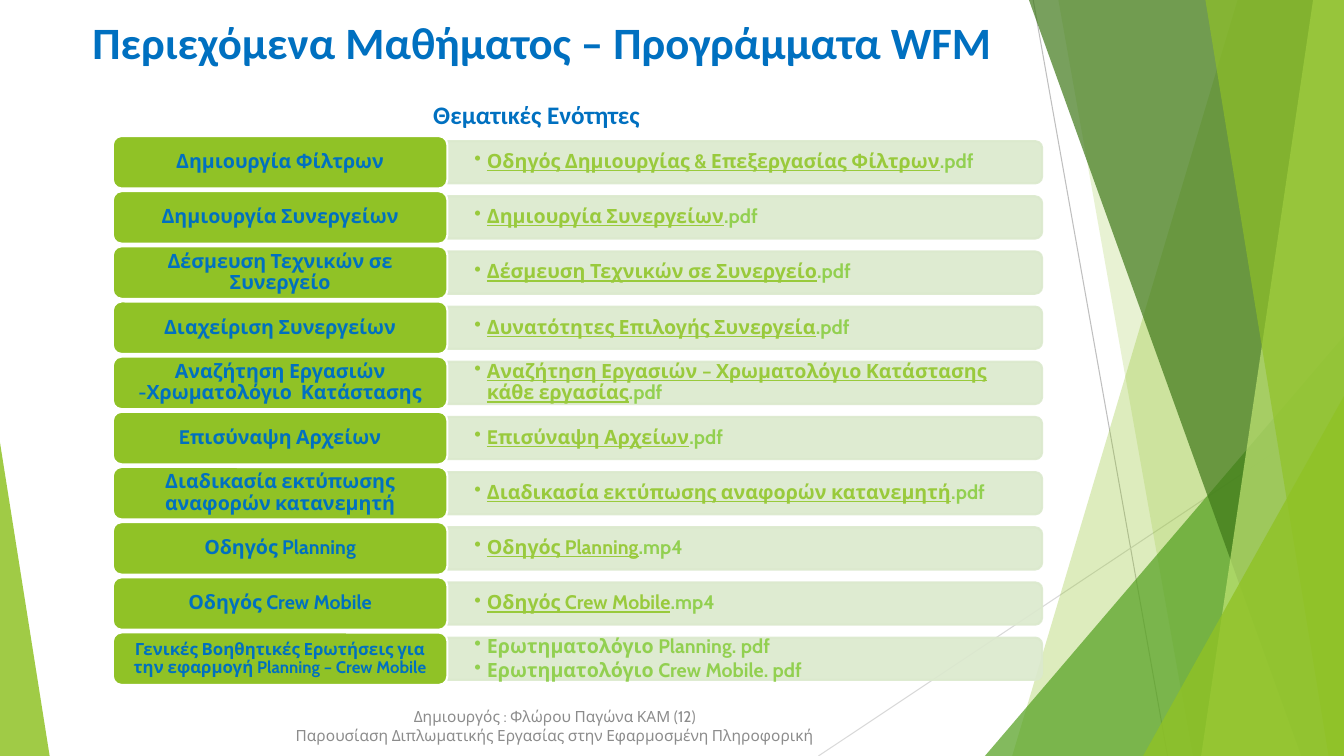
import lxml.etree
import pptx
import pptx.dml.color
import pptx.enum.shapes
import pptx.enum.text
import pptx.oxml.ns
import pptx.util

Pt = pptx.util.Pt
qn = pptx.oxml.ns.qn
SHAPES = pptx.enum.shapes.MSO_SHAPE
ALIGN = pptx.enum.text.PP_ALIGN
ANCHOR = pptx.enum.text.MSO_ANCHOR

# Content
TITLE = "Περιεχόμενα Μαθήματος – Προγράμματα WFM"
SUBTITLE = "Θεματικές Ενότητες"
FOOTER = [
    "Δημιουργός : Φλώρου Παγώνα ΚΑΜ (12)",
    "Παρουσίαση Διπλωματικής Εργασίας στην Εφαρμοσμένη Πληροφορική",
]
# Each unit: label, then its files as (underlined part, plain part)
UNITS = [
    ("Δημιουργία Φίλτρων", [("Οδηγός Δημιουργίας & Επεξεργασίας Φίλτρων", ".pdf")]),
    ("Δημιουργία Συνεργείων", [("Δημιουργία Συνεργείων", ".pdf")]),
    ("Δέσμευση Τεχνικών σε Συνεργείο", [("Δέσμευση Τεχνικών σε Συνεργείο", ".pdf")]),
    ("Διαχείριση Συνεργείων", [("Δυνατότητες Επιλογής Συνεργεία", ".pdf")]),
    ("Αναζήτηση Εργασιών -Χρωματολόγιο  Κατάστασης",
     [("Αναζήτηση Εργασιών – Χρωματολόγιο Κατάστασης κάθε εργασίας", ".pdf")]),
    ("Eπισύναψη Αρχείων", [("Eπισύναψη Αρχείων", ".pdf")]),
    ("Διαδικασία εκτύπωσης αναφορών κατανεμητή",
     [("Διαδικασία εκτύπωσης αναφορών κατανεμητή", ".pdf")]),
    ("Οδηγός Planning", [("Οδηγός Planning", ".mp4")]),
    ("Οδηγός Crew Mobile", [("Οδηγός Crew Mobile", ".mp4")]),
    ("Γενικές Βοηθητικές Ερωτήσεις για την εφαρμογή Planning – Crew Mobile",
     [("", "Ερωτηματολόγιο Planning. pdf"), ("", "Ερωτηματολόγιο Crew Mobile. pdf")]),
]

THEME = {
    "heading_font": "Calibri", "body_font": "Cabin",
    "title": 32, "subtitle": 18, "body": 14, "small": 12, "footer": 11,
    "blue": "0070C0", "grey": "8C8C8C", "green": "90C226", "white": "FFFFFF",
    "bar": "DBE9CD", "link": "99CA3C", "file": "92D050",
    "mid_green": "54A021", "dark_green": "3F7819", "pale_green": "C0E474",
}

# Backdrop: rays are (top x, bottom x), triangles are (left, top, width, height, apex)
WIDTH, HEIGHT = 960, 540
RULES = [((738, 0), (834, 540), "BFBFBF"), ((960, 290), (584.6, 540), "D9D9D9")]
FACETS = [
    ("ray", (884, 723), "green", 30),
    ("ray", (756, 852), "green", 20),
    ("triangle", (703.5, 240, 256.5, 300, 1), "mid_green", 72),
    ("ray", (735, 929.5), "dark_green", 70),
    ("ray", (938, 858), "pale_green", 70),
    ("ray", (861, 949), "green", 65),
    ("triangle", (816.5, 283, 143.5, 257, 1), "green", 80),
    ("triangle", (0, 316, 35.5, 224, 0), "green", 85),
]

# Rows of units
FIRST_CENTRE, ROW_STEP = 115.9, 39.4
LABEL_LEFT, LABEL_WIDTH, LABEL_HEIGHT = 80.6, 239, 37.5
BAR_LEFT, BAR_WIDTH, BAR_HEIGHT = 319.6, 424.8, 30.2

deck = pptx.Presentation()
deck.slide_width, deck.slide_height = Pt(WIDTH), Pt(HEIGHT)
page = deck.slides.add_slide(deck.slide_layouts[6])


def rgb(name):
    return pptx.dml.color.RGBColor.from_string(THEME.get(name, name))


def paint(shape, fill, line=None, opacity=100):
    shape.shadow.inherit = False
    shape.fill.solid()
    shape.fill.fore_color.rgb = rgb(fill)
    if line:
        shape.line.color.rgb = rgb(line)
        shape.line.width = Pt(1.5)
    else:
        shape.line.fill.background()
    if opacity < 100:
        for color in list(shape._element.spPr.iter(qn("a:srgbClr"))):
            lxml.etree.SubElement(color, qn("a:alpha")).set("val", str(opacity * 1000))


def add_box(left, top, width, height):
    return page.shapes.add_textbox(Pt(left), Pt(top), Pt(width), Pt(height))


def write(box, paragraphs, size, color, font="body_font", bold=True, align=ALIGN.CENTER,
          anchor=ANCHOR.MIDDLE, margins=(7.2, 3.6), wrap=True, spacing=None, after=0,
          bullet=False):
    """Each paragraph is a string or a list of (text, color, underlined)."""
    frame = box.text_frame
    frame.word_wrap = wrap
    frame.vertical_anchor = anchor
    frame.margin_left = frame.margin_right = Pt(margins[0])
    frame.margin_top = frame.margin_bottom = Pt(margins[1])
    for index, spans in enumerate(paragraphs):
        para = frame.add_paragraph() if index else frame.paragraphs[0]
        para.alignment = align
        para.space_after = Pt(after)
        if spacing:
            para.line_spacing = spacing
        if bullet:
            settings = para._p.get_or_add_pPr()
            settings.set("marL", str(Pt(9)))
            settings.set("indent", str(-Pt(9)))
            lxml.etree.SubElement(settings, qn("a:buChar")).set("char", "•")
        if isinstance(spans, str):
            spans = [(spans, color, False)]
        for text, span_color, underlined in spans:
            span = para.add_run()
            span.text = text
            span.font.name = THEME[font]
            span.font.size = Pt(THEME[size])
            span.font.bold = bold
            span.font.underline = underlined
            span.font.color.rgb = rgb(span_color)


# Backdrop
for start, end, color in RULES:
    rule = page.shapes.add_connector(
        pptx.enum.shapes.MSO_CONNECTOR.STRAIGHT, *map(Pt, start + end))
    rule.line.color.rgb = rgb(color)
    rule.line.width = Pt(0.75)
    lxml.etree.SubElement(rule._element.spPr, qn("a:effectLst"))

for kind, geometry, color, opacity in FACETS:
    if kind == "ray":
        top_x, bottom_x = geometry
        outline = page.shapes.build_freeform(Pt(top_x), 0)
        corners = [(WIDTH, 0), (WIDTH, HEIGHT), (bottom_x, HEIGHT)]
        outline.add_line_segments([(Pt(x), Pt(y)) for x, y in corners], close=True)
        facet = outline.convert_to_shape()
    else:
        facet = page.shapes.add_shape(SHAPES.ISOSCELES_TRIANGLE, *map(Pt, geometry[:4]))
        facet.adjustments[0] = geometry[4]
    paint(facet, color, opacity=opacity)

# Headings and footer
write(add_box(49, 7.2, 676.8, 103.7), [TITLE], "title", "blue",
      font="heading_font", anchor=ANCHOR.TOP)
write(add_box(148.3, 504, 496, 28.8), FOOTER, "footer", "grey", bold=False)
write(add_box(302.4, 67.7, 163.4, 28.8), [SUBTITLE], "subtitle", "blue",
      font="heading_font", anchor=ANCHOR.TOP, align=ALIGN.LEFT, wrap=False)

# Units
for row, (label_text, files) in enumerate(UNITS):
    centre = FIRST_CENTRE + row * ROW_STEP
    # The bar is a tall shape turned a quarter, so its round corners face right
    bar = page.shapes.add_shape(
        SHAPES.ROUND_2_SAME_RECTANGLE,
        Pt(BAR_LEFT + (BAR_WIDTH - BAR_HEIGHT) / 2), Pt(centre - BAR_WIDTH / 2),
        Pt(BAR_HEIGHT), Pt(BAR_WIDTH))
    bar.rotation = 90
    paint(bar, "bar", line="bar", opacity=90)

    entries = [[(text, color, underlined)
                for text, color, underlined in ((name, "link", True), (rest, "file", False))
                if text] for name, rest in files]
    write(add_box(BAR_LEFT, centre - BAR_HEIGHT / 2, BAR_WIDTH, BAR_HEIGHT), entries,
          "body", "file", align=ALIGN.LEFT, margins=(19.2, 0), spacing=0.9, after=2.1,
          bullet=True)

    label = page.shapes.add_shape(
        SHAPES.ROUNDED_RECTANGLE, Pt(LABEL_LEFT), Pt(centre - LABEL_HEIGHT / 2),
        Pt(LABEL_WIDTH), Pt(LABEL_HEIGHT))
    paint(label, "green", line="white")
    write(label, [label_text], "small" if row == len(UNITS) - 1 else "body", "blue",
          margins=(5.8, 2), spacing=0.9)

deck.save("out.pptx")
